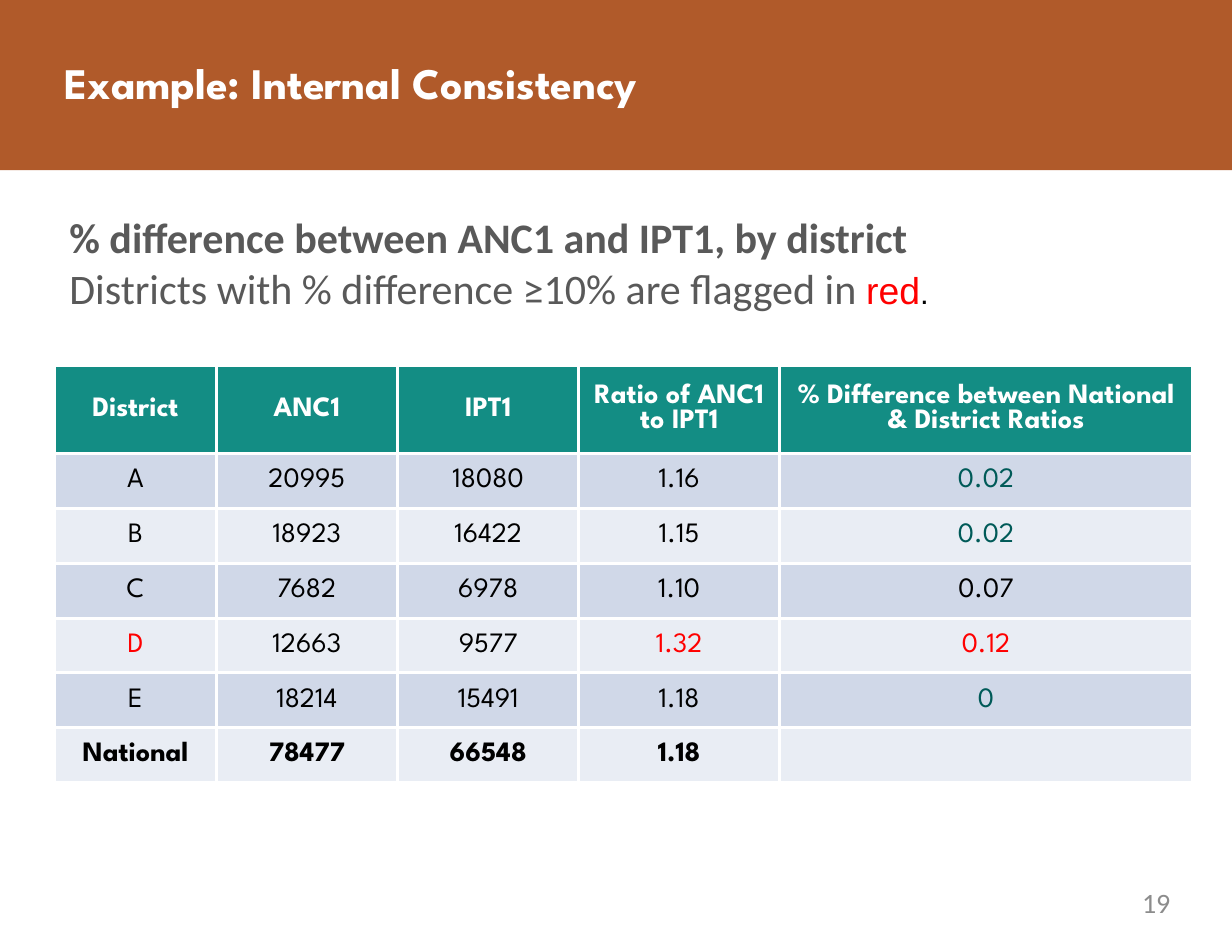
from lxml.etree import SubElement
from pptx import Presentation
from pptx.dml.color import RGBColor
from pptx.enum.shapes import MSO_SHAPE as Shape
from pptx.enum.text import MSO_ANCHOR as Anchor, PP_ALIGN as Align
from pptx.oxml.ns import qn
from pptx.util import Inches, Pt

WHITE = RGBColor(0xFF, 0xFF, 0xFF)
BLACK = RGBColor(0, 0, 0)
RUST = RGBColor(0xB0, 0x5A, 0x2A)
TEAL = RGBColor(0x13, 0x8D, 0x84)
DARK_TEAL = RGBColor(0x00, 0x5A, 0x58)
RED = RGBColor(0xFF, 0, 0)
GRAY = RGBColor(0x59, 0x59, 0x59)
LIGHT_GRAY = RGBColor(0x8C, 0x8C, 0x8C)
BANDS = (RGBColor(0xE9, 0xED, 0xF4), RGBColor(0xD0, 0xD8, 0xE8))

HEADING_FONT = "League Spartan"
BODY_FONT = "Calibri"
COLUMN_WIDTHS = (1.44, 1.62, 1.62, 1.79, 3.69)
HEADER_HEIGHT, ROW_HEIGHT = 0.79, 0.49
ROWS = (
    ("District", "ANC1", "IPT1", "Ratio of ANC1 to IPT1",
     "% Difference between National & District Ratios"),
    ("A", "20995", "18080", "1.16", "0.02"),
    ("B", "18923", "16422", "1.15", "0.02"),
    ("C", "7682", "6978", "1.10", "0.07"),
    ("D", "12663", "9577", "1.32", "0.12"),
    ("E", "18214", "15491", "1.18", "0"),
    ("National", "78477", "66548", "1.18", ""),
)
ACCENTS = {(1, 4): DARK_TEAL, (2, 4): DARK_TEAL, (5, 4): DARK_TEAL,
           (4, 0): RED, (4, 3): RED, (4, 4): RED}


class SlideBuilder:
    """Draws styled elements on one slide."""

    def __init__(self, slide):
        self.slide = slide

    def add_text_run(self, paragraph, text, color, **font_format):
        run = paragraph.add_run()
        run.text = text
        run.font.color.rgb = color
        for name, value in font_format.items():
            setattr(run.font, name, value)

    def set_margins(self, target, horizontal, vertical):
        margins = {"margin_left": horizontal, "margin_right": horizontal,
                   "margin_top": vertical, "margin_bottom": vertical}
        for name, value in margins.items():
            setattr(target, name, Inches(value))

    def band(self, left, top, width, height, color):
        shape = self.slide.shapes.add_shape(
            Shape.RECTANGLE, *map(Inches, (left, top, width, height)))
        shape.shadow.inherit = False
        shape.fill.solid()
        shape.fill.fore_color.rgb = color
        shape.line.fill.background()

    def text(self, box, paragraphs, margins=(0, 0), align=Align.LEFT):
        frame = self.slide.shapes.add_textbox(*map(Inches, box)).text_frame
        frame.word_wrap = True
        self.set_margins(frame, *margins)
        for index, runs in enumerate(paragraphs):
            paragraph = frame.add_paragraph() if index else frame.paragraphs[0]
            paragraph.alignment = align
            for text, color, font_format in runs:
                self.add_text_run(paragraph, text, color, **font_format)

    def border(self, cell, color, points):
        properties = cell._tc.get_or_add_tcPr()
        for side in ("a:lnL", "a:lnR", "a:lnT", "a:lnB"):
            line = SubElement(properties, qn(side), w=str(Pt(points)))
            fill = SubElement(line, qn("a:solidFill"))
            SubElement(fill, qn("a:srgbClr"), val=str(color))

    def cell(self, cell, text, fill, color, bold):
        self.border(cell, WHITE, 2.25)
        cell.fill.solid()
        cell.fill.fore_color.rgb = fill
        cell.vertical_anchor = Anchor.MIDDLE
        self.set_margins(cell, 0.11, 0.06)
        paragraph = cell.text_frame.paragraphs[0]
        paragraph.alignment = Align.CENTER
        if text:
            self.add_text_run(paragraph, text, color,
                              name=HEADING_FONT, size=Pt(18), bold=bold)

    def table(self, left, top, rows, widths):
        height = HEADER_HEIGHT + ROW_HEIGHT * (len(rows) - 1)
        table = self.slide.shapes.add_table(
            len(rows), len(widths),
            *map(Inches, (left, top, sum(widths), height))).table
        for column, width in zip(table.columns, widths):
            column.width = Inches(width)
        for row_index, values in enumerate(rows):
            header = row_index == 0
            table.rows[row_index].height = Inches(HEADER_HEIGHT if header else ROW_HEIGHT)
            fill = TEAL if header else BANDS[row_index % 2]
            bold = header or row_index == len(rows) - 1
            for column_index, text in enumerate(values):
                color = WHITE if header else ACCENTS.get((row_index, column_index), BLACK)
                self.cell(table.cell(row_index, column_index), text, fill, color, bold)


def main():
    presentation = Presentation()
    presentation.slide_width = Inches(11)
    presentation.slide_height = Inches(8.5)
    builder = SlideBuilder(presentation.slides.add_slide(presentation.slide_layouts[6]))

    title = {"name": HEADING_FONT, "size": Pt(28), "bold": True}
    lead = {"name": BODY_FONT, "size": Pt(27)}
    builder.band(0, 0, 11, 1.52, RUST)
    builder.text((0.48, 0.5, 10.5, 0.47),
                 [[("Example: Internal Consistency", WHITE, title)]], (0.1, 0))
    builder.table(0.49, 3.26, ROWS, COLUMN_WIDTHS)
    builder.text((0.51, 1.83, 10.17, 1.02), [
        [("% difference between ANC1 and IPT1, by district", GRAY, {**lead, "bold": True})],
        [("Districts with % difference ≥10% are flagged in ", GRAY, lead),
         ("red", RED, {"name": "Arial", "size": Pt(24)}),
         (".", BLACK, {"name": "Arial", "size": Pt(20)})],
    ], (0.11, 0.06))
    builder.text((7.92, 7.91, 2.53, 0.42),
                 [[("19", LIGHT_GRAY, {"name": BODY_FONT, "size": Pt(18)})]],
                 align=Align.RIGHT)
    presentation.save("out.pptx")


if __name__ == "__main__":
    main()
